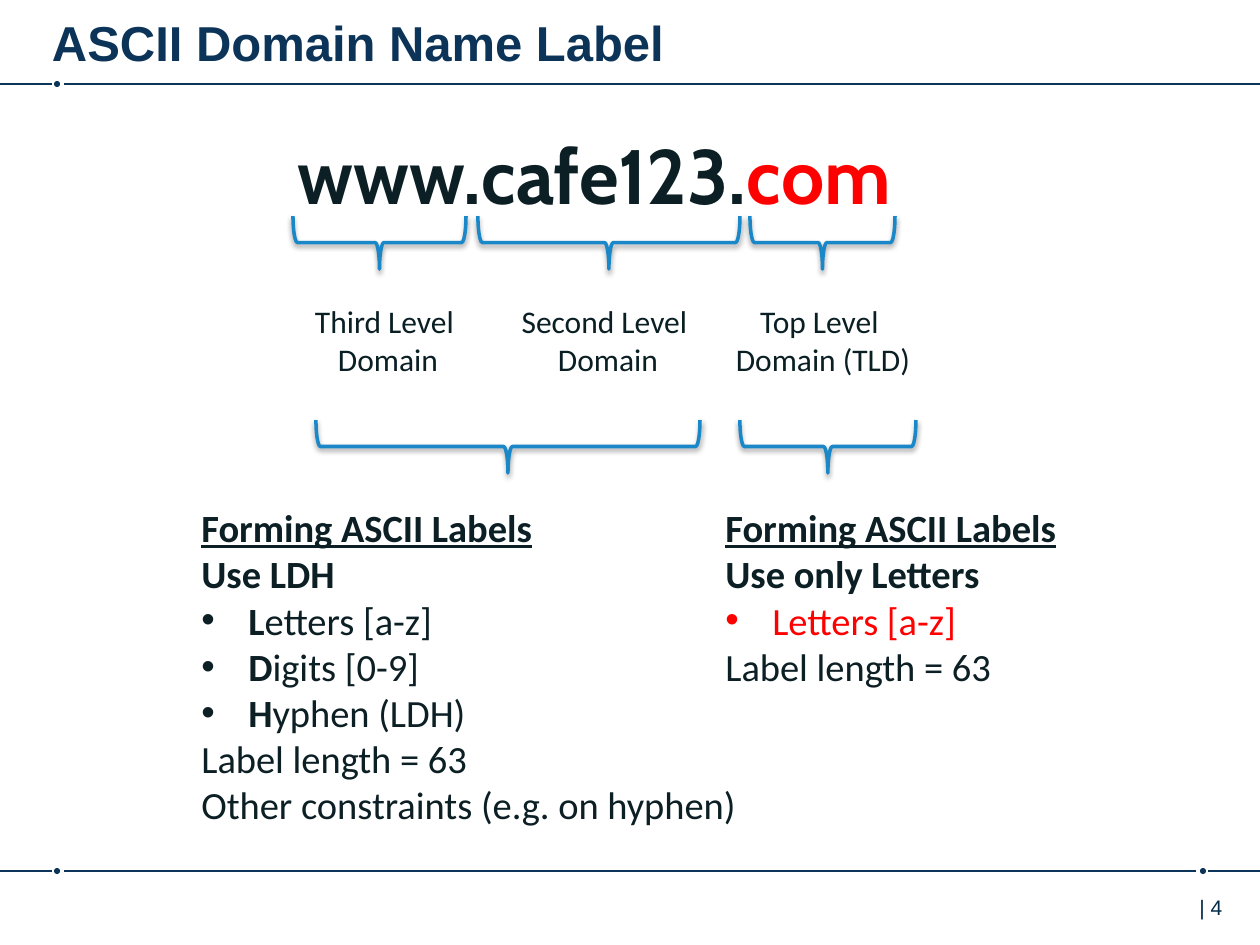
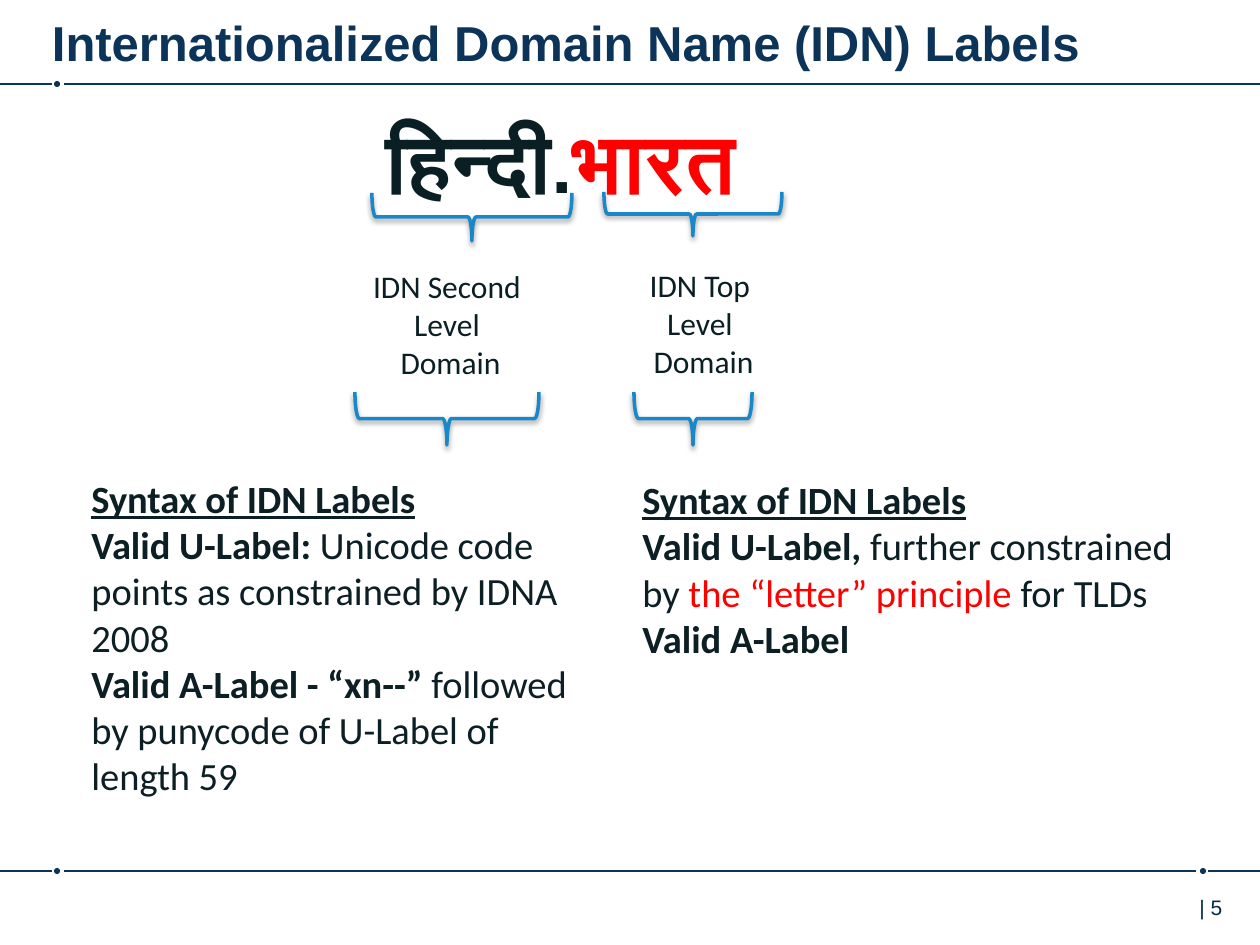
import lxml.etree
import pptx
import pptx.dml.color
import pptx.enum.shapes
import pptx.enum.text
import pptx.oxml.ns
import pptx.util

PX = 914400 / 126
WIDTH, HEIGHT = 1260, 945
COLOURS = {
    "navy": "0C3458",
    "page": "002B49",
    "ink": "0C1F24",
    "label": "0A1F24",
    "brace": "1A87C9",
    "red": "FF0000",
    "shadow": "000000",
}
SHAPES = pptx.enum.shapes.MSO_SHAPE
CENTRE = pptx.enum.text.PP_ALIGN.CENTER


def px(length):
    """Turn a length in px into EMU."""
    return pptx.util.Emu(round(length * PX))


def colour(name):
    """Look up a named colour."""
    return pptx.dml.color.RGBColor.from_string(COLOURS[name])


def add_xml(parent, tag, **attributes):
    """Append a DrawingML element to its parent."""
    element = lxml.etree.SubElement(parent, pptx.oxml.ns.qn(tag))
    for key, value in attributes.items():
        element.set(key, str(value))
    return element


def add_text(slide, box, paragraphs, size, ink, font="Calibri", align=None, wrap=True, side=None):
    """Write paragraphs of (text, marks) runs, where marks name bold, underline, bullet or red."""
    frame = slide.shapes.add_textbox(*map(px, box)).text_frame
    frame.word_wrap = wrap
    if side is not None:
        frame.margin_left = frame.margin_right = px(side)
    for index, runs in enumerate(paragraphs):
        paragraph = frame.paragraphs[0] if index == 0 else frame.add_paragraph()
        if align is not None:
            paragraph.alignment = align
        if "bullet" in runs[0][1]:
            properties = paragraph._p.get_or_add_pPr()
            properties.set("marL", str(px(47)))
            properties.set("indent", str(-px(47)))
            add_xml(properties, "a:buFont", typeface="Arial")
            add_xml(properties, "a:buChar", char="•")
        for text, marks in runs:
            run = paragraph.add_run()
            run.text = text
            run.font.name = font
            run.font.size = pptx.util.Pt(size)
            run.font.bold = "bold" in marks
            run.font.underline = "underline" in marks
            run.font.color.rgb = colour("red" if "red" in marks else ink)


def add_rule(slide, y, segments, dots):
    """Draw a horizontal rule in segments, with a dot in each gap."""
    for start, end in segments:
        line = slide.shapes.add_connector(
            pptx.enum.shapes.MSO_CONNECTOR.STRAIGHT, px(start), px(y), px(end), px(y))
        line.line.color.rgb = colour("navy")
        line.line.width = pptx.util.Pt(1)
        add_xml(line._element.spPr, "a:effectLst")
    for x in dots:
        dot = slide.shapes.add_shape(SHAPES.OVAL, px(x - 3), px(y - 3), px(6), px(6))
        dot.shadow.inherit = False
        dot.fill.solid()
        dot.fill.fore_color.rgb = colour("navy")
        dot.line.fill.background()


def add_frame(deck, title, page):
    """Add a slide with its title, rules and page number."""
    slide = deck.slides.add_slide(deck.slide_layouts[6])
    add_rule(slide, 84, [(0, 52), (64, WIDTH)], [57])
    add_rule(slide, 871, [(0, 52), (64, 1196), (1208, WIDTH)], [57, 1203])
    add_text(slide, (1187, 888, 73, 50), [[(f"| {page}", "")]], 12, "page", "Arial")
    add_text(slide, (52, 6, 1104, 62), [[(title, "bold")]], 28, "navy", "Arial", side=0)
    return slide


def add_brace(slide, left, top, width, depth=53):
    """Draw a brace that opens upwards and fills the given box."""
    brace = slide.shapes.add_shape(
        SHAPES.LEFT_BRACE, px(left + (width - depth) / 2), px(top + (depth - width) / 2),
        px(depth), px(width))
    brace.rotation = 270
    brace.fill.background()
    brace.line.color.rgb = colour("brace")
    brace.line.width = pptx.util.Pt(2)
    brace.shadow.inherit = False
    effects = brace._element.spPr.find(pptx.oxml.ns.qn("a:effectLst"))
    shadow = add_xml(effects, "a:outerShdw", blurRad=40000, dist=20000, dir=5400000, rotWithShape=0)
    add_xml(add_xml(shadow, "a:srgbClr", val=COLOURS["shadow"]), "a:alpha", val=38000)


def add_level(slide, box, lines):
    """Name a domain level in centred lines."""
    add_text(slide, box, [[(line, "")] for line in lines], 18, "label", align=CENTRE, wrap=False)


def add_rules_of_label(slide, box, paragraphs):
    """Write the rules that a label must follow."""
    add_text(slide, box, paragraphs, 22, "ink")


def add_ascii_slide(deck):
    """Build the slide on ASCII labels."""
    slide = add_frame(deck, "ASCII Domain Name Label", 4)
    add_text(slide, (285, 121, 693, 106), [[("www.cafe123.", "bold"), ("com", "bold red")]],
             44, "ink", "Cabin", wrap=False)
    for left, width in [(293, 173), (478, 262), (750, 145)]:
        add_brace(slide, left, 216, width)
    for left, width, lines in [
        (301, 174, ("Third Level ", "Domain")),
        (508, 200, ("Second Level ", "Domain")),
        (722, 202, ("Top Level ", "Domain (TLD)")),
    ]:
        add_level(slide, (left, 296, width, 89), lines)
    for left, width in [(316, 384), (740, 176)]:
        add_brace(slide, left, 420, width)
    heading = [("Forming ASCII Labels", "bold underline")]
    length = [("Label length = 63", "")]
    ldh = [[(word[0], "bold bullet"), (word[1:], "")]
           for word in ("Letters [a-z]", "Digits [0-9]", "Hyphen (LDH)")]
    add_rules_of_label(slide, (189, 498, 612, 339), [
        heading, [("Use LDH", "bold")], *ldh, length,
        [("Other constraints (e.g. on hyphen)", "")]])
    add_rules_of_label(slide, (713, 498, 508, 199), [
        heading, [("Use only Letters", "bold")], [("Letters [a-z]", "bullet red")], length])


def add_idn_slide(deck):
    """Build the slide on internationalized labels."""
    slide = add_frame(deck, "Internationalized Domain Name (IDN) Labels", 5)
    add_level(slide, (359, 261, 183, 127), ("IDN Second ", "Level ", "Domain"))
    add_level(slide, (636, 260, 135, 127), ("IDN Top ", "Level ", "Domain"))
    add_brace(slide, 372, 193, 200, 48)
    add_brace(slide, 604, 192, 178, 44)
    add_brace(slide, 355, 392, 184)
    add_brace(slide, 634, 392, 118)
    heading = [("Syntax of IDN Labels", "bold underline")]
    add_rules_of_label(slide, (79, 469, 536, 339), [
        heading,
        [("Valid U-Label: ", "bold"), ("Unicode code points as constrained by IDNA 2008", "")],
        [("Valid A-Label - “xn--” ", "bold"), ("followed by punycode of U-Label of length 59", "")]])
    add_rules_of_label(slide, (630, 470, 577, 199), [
        heading,
        [("Valid U-Label, ", "bold"), ("further constrained by ", ""),
         ("the “letter” principle ", "red"), ("for TLDs", "")],
        [("Valid A-Label", "bold")]])
    add_text(slide, (373, 103, 418, 115), [[("हिन्दी.", "bold"), ("भारत", "bold red")]],
             48, "label", "Cabin", wrap=False)


def main():
    """Build and save the presentation."""
    deck = pptx.Presentation()
    deck.slide_width, deck.slide_height = px(WIDTH), px(HEIGHT)
    add_ascii_slide(deck)
    add_idn_slide(deck)
    deck.save("out.pptx")


if __name__ == "__main__":
    main()
